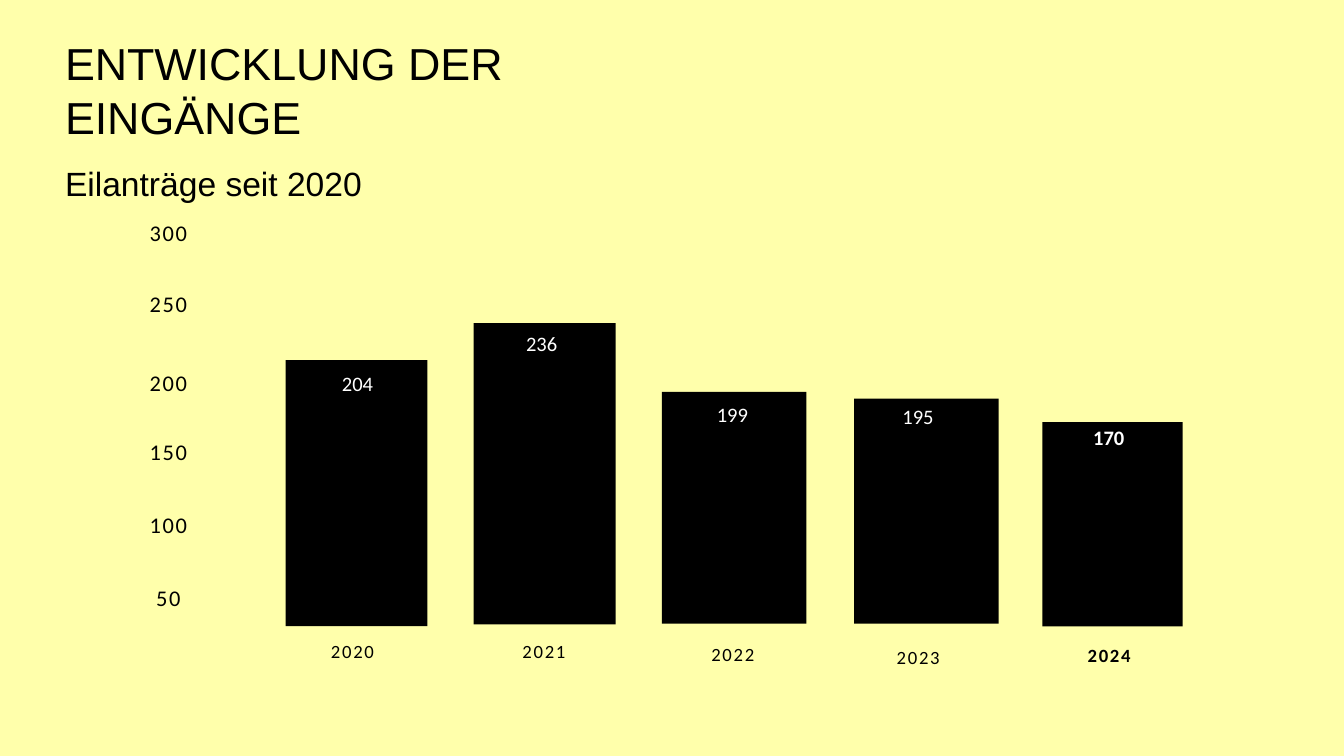
from collections import namedtuple

from pptx import Presentation
from pptx.dml.color import RGBColor
from pptx.enum import shapes, text
from pptx.util import Pt

COLORS = {"background": "FFFFAB", "ink": "000000", "value": "FFFFFF"}
LABEL_FONT = "Calibri"
TITLE_FONT = "Arial"

# Vertical axis: label and top of its box
AXIS = {"300": 227.5, "250": 303.1, "200": 387.4, "150": 461.5, "100": 540, "50": 618.5}

# Each column: bar box, then corners of its value and its year
Column = namedtuple("Column", "year value bar value_at year_at year_spacing bold")
COLUMNS = [
    Column("2020", "204", (306, 385.9, 152, 285.1), (359.3, 393.8), (298.8, 673.2), 36, False),
    Column("2021", "236", (507.6, 346.3, 152, 322.6), (556.6, 350.6), (504, 673.2), 36, False),
    Column("2022", "199", (709.2, 419.8, 154.8, 248.4), (761, 427), (706.3, 657.4), 55.1, False),
    Column("2023", "195", (915.1, 427, 154.8, 241.2), (959.8, 429.1), (905, 661), 55.1, False),
    Column("2024", "170", (1116.7, 452.2, 150.5, 218.9), (1164.2, 452.2), (1109.5, 658.8), 55.1, True),
]


def color(name):
    return RGBColor.from_string(COLORS[name])


def add_text_box(slide, box, wrap=True, inset=True):
    frame = slide.shapes.add_textbox(*map(Pt, box)).text_frame
    frame.word_wrap = wrap
    frame.auto_size = text.MSO_AUTO_SIZE.SHAPE_TO_FIT_TEXT
    if not inset:
        frame.margin_left = frame.margin_right = 0
        frame.margin_top = frame.margin_bottom = 0
    return frame


def write(paragraph, words, size, font=LABEL_FONT, ink="ink", bold=False,
          centered=False, tracking=None, line_spacing=None, space_after=None):
    run = paragraph.add_run()
    run.text = words
    run.font.name = font
    run.font.size = Pt(size)
    run.font.bold = bold
    run.font.color.rgb = color(ink)
    if tracking:
        run.font._element.set("spc", str(int(tracking * 100)))
    if centered:
        paragraph.alignment = text.PP_ALIGN.CENTER
    if line_spacing:
        paragraph.line_spacing = line_spacing
    if space_after:
        paragraph.space_after = Pt(space_after)


def add_label(slide, words, box, size, line_spacing, bold=False):
    frame = add_text_box(slide, box, inset=False)
    write(frame.paragraphs[0], words, size, bold=bold, centered=True,
          tracking=1.8, line_spacing=Pt(line_spacing))


def add_bar(slide, box):
    bar = slide.shapes.add_shape(shapes.MSO_SHAPE.RECTANGLE, *map(Pt, box))
    bar.shadow.inherit = False
    bar.fill.solid()
    bar.fill.fore_color.rgb = color("ink")
    bar.line.fill.background()


def add_column(slide, column):
    add_bar(slide, column.bar)
    value = add_text_box(slide, (*column.value_at, 48.2, 33.8), wrap=False)
    write(value.paragraphs[0], column.value, 22, ink="value", bold=column.bold)
    add_label(slide, column.year, (*column.year_at, 157.7, column.year_spacing),
              20, column.year_spacing, bold=column.bold)


def add_heading(slide):
    heading = add_text_box(slide, (62.6, 34.6, 629.3, 124.6))
    write(heading.paragraphs[0], "ENTWICKLUNG DER EINGÄNGE", 48, font=TITLE_FONT)
    write(heading.add_paragraph(), "Eilanträge seit 2020", 36, font=TITLE_FONT,
          line_spacing=1.5, space_after=24)


def main():
    deck = Presentation()
    deck.slide_width, deck.slide_height = Pt(1440), Pt(810)
    slide = deck.slides.add_slide(deck.slide_layouts[6])
    slide.background.fill.solid()
    slide.background.fill.fore_color.rgb = color("background")

    # Title and subtitle
    add_heading(slide)

    # Axis labels
    for label, top in AXIS.items():
        add_label(slide, label, (144, top, 72.7, 36), 24, 36.4)

    # Bars with values and years
    for column in COLUMNS:
        add_column(slide, column)

    deck.save("out.pptx")


if __name__ == "__main__":
    main()
